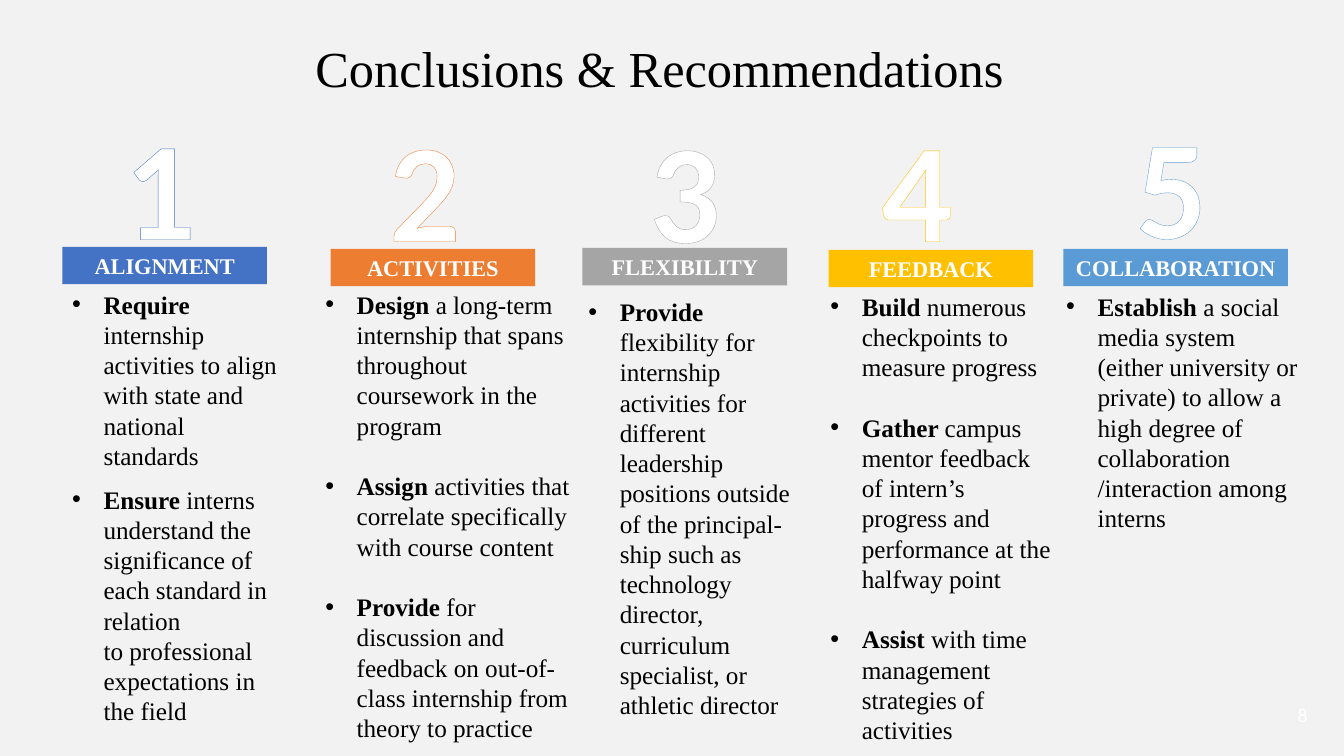
from lxml import etree
from pptx import Presentation
from pptx import util as u
from pptx.dml.color import RGBColor
from pptx.enum import shapes, text
from pptx.oxml import ns

SERIF = "Times New Roman"
SANS = "Calibri"
BLACK = "000000"
WHITE = "FFFFFF"
INDENT = u.Cm(0.79)
CENTER = text.PP_ALIGN.CENTER
BLANK_LINE = 21.6

COLUMNS = [
    ("ALIGNMENT", "4472C4", (1.35, 2.39, 5.36), (1.57, 6.22, 5.16),
     (1.57, 7.16, 5.82, 12.12), 9.6,
     [("Require", " internship activities to align with state and national standards"),
      ("Ensure", " interns understand the significance of each standard in relation \n"
                 "to professional expectations in the field")]),
    ("ACTIVITIES", "ED7D31", (8.33, 2.44, 4.75), (8.33, 6.27, 5.16),
     (7.95, 7.16, 6.76, 11.79), BLANK_LINE,
     [("Design", " a long-term internship that spans throughout coursework in the program"),
      ("Assign", " activities that correlate specifically with course content"),
      ("Provide ", "for discussion and feedback on out-of-class internship "
                   "from theory to practice")]),
    ("FLEXIBILITY", "A5A5A5", (14.88, 2.46, 4.75), (14.68, 6.25, 5.16),
     (14.58, 7.34, 5.84, 10.26), BLANK_LINE,
     [("Provide ", "flexibility for internship activities for different leadership "
                   "positions outside of the principal-ship such as technology director, "
                   "curriculum specialist, or athletic director")]),
    ("FEEDBACK", "FFC000", (20.73, 2.44, 4.75), (20.88, 6.3, 5.16),
     (20.68, 7.21, 6.05, 11.79), BLANK_LINE,
     [("Build ", "numerous checkpoints to measure progress"),
      ("Gather ", "campus mentor feedback of intern’s progress and performance "
                  "at the halfway point"),
      ("Assist ", "with time management strategies of activities")]),
    ("COLLABORATION", "5B9BD5", (27.15, 2.36, 4.75), (26.8, 6.27, 5.66),
     (26.62, 7.21, 6.43, 6.93), BLANK_LINE,
     [("Establish ", "a social media system (either university or private) to allow "
                     "a high degree of collaboration /interaction among interns")]),
]


def color(value):
    return RGBColor.from_string(value)


def element(parent, tag, **attributes):
    return etree.SubElement(parent, ns.qn(tag), attributes)


class SlideBuilder:
    def __init__(self, presentation, background):
        self.slide = presentation.slides.add_slide(presentation.slide_layouts[6])
        fill = self.slide.background.fill
        fill.solid()
        fill.fore_color.rgb = color(background)

    def run(self, paragraph, words, size, ink=BLACK, bold=False, font=SERIF):
        for index, line in enumerate(words.split("\n")):
            if index:
                paragraph.add_line_break()
            run = paragraph.add_run()
            run.text = line
            run.font.size = u.Pt(size)
            run.font.name = font
            run.font.bold = bold
            run.font.color.rgb = color(ink)
        return run

    def textbox(self, left, top, width, height):
        box = self.slide.shapes.add_textbox(*map(u.Cm, (left, top, width, height)))
        box.text_frame.word_wrap = True
        return box.text_frame

    def label(self, place, words, size, align=CENTER, **style):
        paragraph = self.textbox(*place).paragraphs[0]
        paragraph.alignment = align
        return self.run(paragraph, words, size, **style)

    def numeral(self, place, number, outline):
        run = self.label((*place, 4.52), str(number), 100, ink=WHITE, bold=True, font=SANS)
        properties = run.font._element
        properties.set("spc", "-300")
        line = etree.Element(ns.qn("a:ln"), w=str(u.Pt(1.5)))
        element(element(line, "a:solidFill"), "a:srgbClr", val=outline)
        properties.insert(0, line)
        effects = etree.Element(ns.qn("a:effectLst"))
        shadow = element(effects, "a:outerShdw", blurRad="38100", dist="38100",
                         dir="5400000", algn="t", rotWithShape="0")
        element(element(shadow, "a:srgbClr", val=BLACK), "a:alpha", val="40000")
        properties.insert(2, effects)

    def bar(self, place, words, fill):
        shape = self.slide.shapes.add_shape(
            shapes.MSO_SHAPE.RECTANGLE, *map(u.Cm, (*place, 0.94)))
        shape.shadow.inherit = False
        shape.fill.solid()
        shape.fill.fore_color.rgb = color(fill)
        shape.line.fill.background()
        paragraph = shape.text_frame.paragraphs[0]
        paragraph.alignment = CENTER
        self.run(paragraph, words, 16, WHITE, True)

    def bullets(self, place, items, gap):
        frame = self.textbox(*place)
        for index, (lead, rest) in enumerate(items):
            paragraph = frame.add_paragraph() if index else frame.paragraphs[0]
            if index:
                paragraph.space_before = u.Pt(gap)
            properties = paragraph._p.get_or_add_pPr()
            properties.set("marL", str(INDENT))
            properties.set("indent", str(-INDENT))
            element(element(properties, "a:buClr"), "a:srgbClr", val=BLACK)
            element(properties, "a:buFont", typeface="Arial")
            element(properties, "a:buChar", char="•")
            self.run(paragraph, lead, 18, bold=True)
            self.run(paragraph, rest, 18)


def main():
    presentation = Presentation()
    presentation.slide_width = u.Cm(33.87)
    presentation.slide_height = u.Cm(19.05)
    builder = SlideBuilder(presentation, "F2F2F2")
    builder.label((7.19, 0.81, 18.87, 1.68), "Conclusions & Recommendations", 36)
    for number, column in enumerate(COLUMNS, 1):
        heading, accent, numeral_place, bar_place, body_place, gap, items = column
        builder.numeral(numeral_place, number, accent)
        builder.bar(bar_place, heading, accent)
        builder.bullets(body_place, items, gap)
    builder.label((31.5, 17.6, 1.7, 0.9), "8", 14, text.PP_ALIGN.RIGHT,
                  ink=WHITE, font=SANS)
    presentation.save("out.pptx")


if __name__ == "__main__":
    main()
